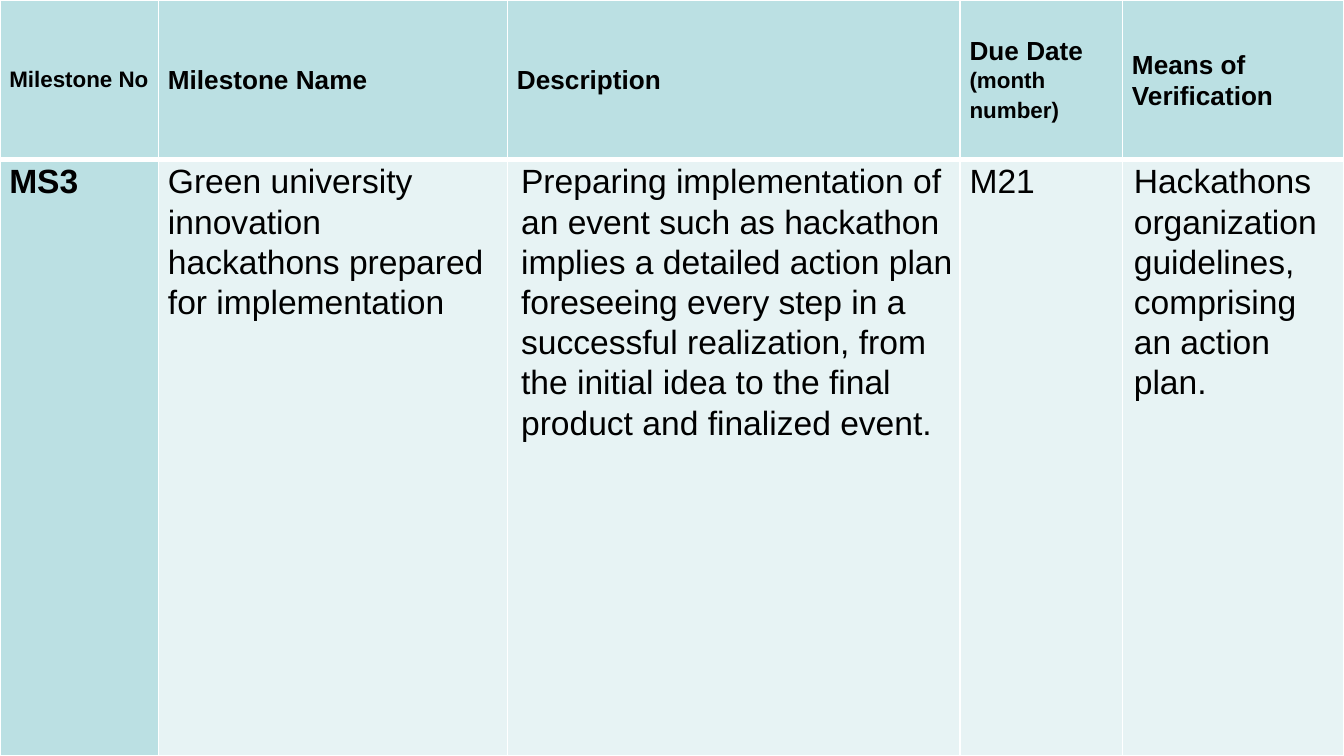
from lxml.etree import SubElement as Sub
from pptx import Presentation
from pptx.dml.color import RGBColor
from pptx.enum.text import MSO_ANCHOR as Anchor
from pptx.oxml.ns import qn
from pptx.util import Pt

TEAL = RGBColor(0xBB, 0xE0, 0xE3)
PALE = RGBColor(0xE7, 0xF3, 0xF4)
WHITE = RGBColor(0xFF, 0xFF, 0xFF)
BLACK = RGBColor(0, 0, 0)

WIDTHS = [85, 187, 242.5, 87, 118.5]
HEIGHTS = [85.5, 319.5]
INDENTS = [0, 0, 2.2, 0, 1]
ROWS = [
    [
        [("Milestone No", 12)],
        [("Milestone Name", 14)],
        [("Description", 14)],
        [("Due Date ", 14), ("(month number)", 12), (" ", 14)],
        [("Means of Verification", 14)],
    ],
    [
        [("MS3", 18)],
        [("Green university innovation hackathons prepared for implementation", 18)],
        [("Preparing implementation of an event such as hackathon implies "
          "a detailed action plan foreseeing every step in a successful "
          "realization, from the initial idea to the final product and "
          "finalized event.", 18)],
        [("M21", 18)],
        [("Hackathons organization guidelines, comprising an action plan.", 18)],
    ],
]


def add_line(cell, side, width):
    line = Sub(cell._tc.get_or_add_tcPr(), qn(f"a:ln{side}"), w=str(Pt(width)))
    fill = Sub(line, qn("a:solidFill"))
    Sub(fill, qn("a:srgbClr"), val=str(WHITE))


deck = Presentation()
deck.slide_width = Pt(720)
deck.slide_height = Pt(405)
slide = deck.slides.add_slide(deck.slide_layouts[6])
table = slide.shapes.add_table(2, 5, 0, 0, Pt(720), Pt(405)).table

for col, width in zip(table.columns, WIDTHS):
    col.width = Pt(width)
for row, height in zip(table.rows, HEIGHTS):
    row.height = Pt(height)

for r, row in enumerate(ROWS):
    for c, parts in enumerate(row):
        cell = table.cell(r, c)
        head = r == 0 or c == 0
        rule = {"L": 1, "R": 1, "T": 1 if r == 0 else 3, "B": 3 if r == 0 else 1}
        for side, width in rule.items():
            add_line(cell, side, width)
        cell.fill.solid()
        cell.fill.fore_color.rgb = TEAL if head else PALE
        cell.vertical_anchor = Anchor.MIDDLE if r == 0 else Anchor.TOP
        cell.margin_left = Pt(5)
        cell.margin_right = Pt(3.6)
        cell.margin_top = cell.margin_bottom = Pt(0.7)

        para = cell.text_frame.paragraphs[0]
        para.space_after = Pt(8)
        if (r, c) != (0, 0):
            para.line_spacing = 1.07
        if r == 1 and INDENTS[c]:
            para._p.get_or_add_pPr().set("marL", str(Pt(INDENTS[c])))
        for text, size in parts:
            run = para.add_run()
            run.text = text
            run.font.name = "Arial"
            run.font.size = Pt(size)
            run.font.bold = head
            run.font.color.rgb = BLACK

deck.save("out.pptx")
